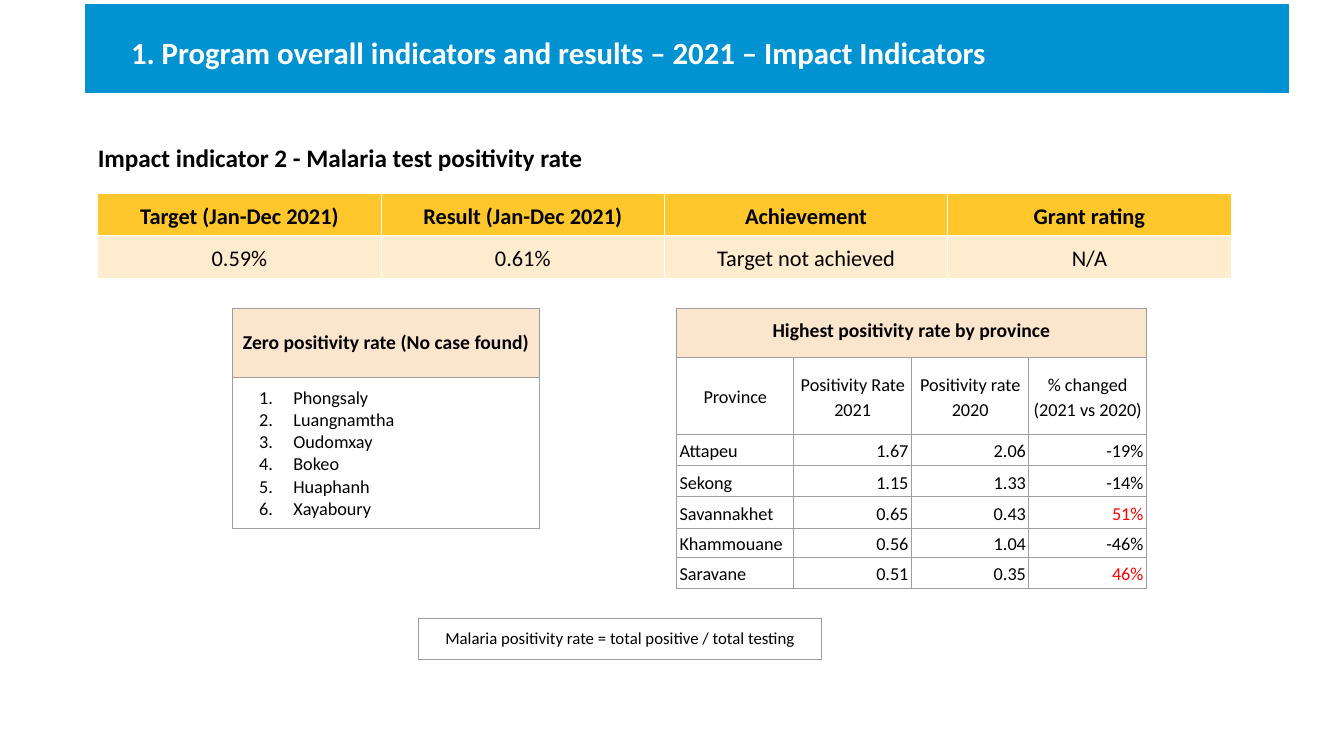
from lxml import etree
from pptx import Presentation
from pptx.dml.color import RGBColor
from pptx.enum.shapes import MSO_SHAPE
from pptx.enum.text import MSO_ANCHOR, PP_ALIGN
from pptx.oxml.ns import qn
from pptx.util import Inches, Pt

LEFT, CENTER, RIGHT = PP_ALIGN.LEFT, PP_ALIGN.CENTER, PP_ALIGN.RIGHT
TOP, MIDDLE = MSO_ANCHOR.TOP, MSO_ANCHOR.MIDDLE
RECTANGLE = MSO_SHAPE.RECTANGLE

FONT = "Calibri"
BLACK, WHITE, RED = "000000", "FFFFFF", "FF0000"
BLUE, GOLD, CREAM, PEACH, GREY = "0092D1", "FFC72C", "FFEBCD", "FCE5CD", "9E9E9E"
TIGHT = (0.03, 0.02, 0.03, 0.02)
ROOMY = (0.1, 0.1, 0.1, 0.1)

SUMMARY = [
    ("Target (Jan-Dec 2021)", "Result (Jan-Dec 2021)", "Achievement", "Grant rating"),
    ("0.59%", "0.61%", "Target not achieved", "N/A"),
]
ZERO_PROVINCES = ["Phongsaly", "Luangnamtha", "Oudomxay", "Bokeo", "Huaphanh", "Xayaboury"]
RATE_HEADINGS = ("Province", "Positivity Rate 2021", "Positivity rate 2020",
                 "% changed (2021 vs 2020)")
RATES = [
    ("Attapeu", "1.67", "2.06", "-19%"),
    ("Sekong", "1.15", "1.33", "-14%"),
    ("Savannakhet", "0.65", "0.43", "51%"),
    ("Khammouane", "0.56", "1.04", "-46%"),
    ("Saravane", "0.51", "0.35", "46%"),
]


def rgb(value):
    return RGBColor.from_string(value)


def set_margins(target, margins):
    for side, margin in zip(("left", "top", "right", "bottom"), margins):
        setattr(target, f"margin_{side}", Inches(margin))


def number_paragraph(para):
    """Give a paragraph an automatic number with a hanging indent."""
    properties = para._p.get_or_add_pPr()
    properties.set("marL", str(Inches(0.5)))
    properties.set("indent", str(-Inches(0.34)))
    etree.SubElement(properties, qn("a:buAutoNum"), type="arabicPeriod")


def write(frame, lines, size, color=BLACK, bold=False, align=LEFT, spacing=1.0,
          numbered=False):
    frame.word_wrap = True
    for index, line in enumerate(lines):
        para = frame.paragraphs[0] if index == 0 else frame.add_paragraph()
        para.alignment = align
        para.line_spacing = spacing
        if numbered:
            number_paragraph(para)
        span = para.add_run()
        span.text = line
        span.font.color.rgb = rgb(color)
        formats = {"name": FONT, "size": Pt(size), "bold": bold}
        for name, value in formats.items():
            setattr(span.font, name, value)


def border_cell(cell, color, width):
    properties = cell._tc.get_or_add_tcPr()
    for edge in ("lnL", "lnR", "lnT", "lnB"):
        line = etree.SubElement(properties, qn(f"a:{edge}"), w=str(Pt(width)))
        fill = etree.SubElement(line, qn("a:solidFill"))
        etree.SubElement(fill, qn("a:srgbClr"), val=color)


def add_grid(page, left, top, widths, heights, border, border_width=0.75):
    """Add an unfilled table with the same border round every cell."""
    frame = page.shapes.add_table(len(heights), len(widths), Inches(left), Inches(top),
                                  Inches(sum(widths)), Inches(sum(heights)))
    table = frame.table
    table.first_row = table.horz_banding = False
    for column, width in zip(table.columns, widths):
        column.width = Inches(width)
    for row, height in zip(table.rows, heights):
        row.height = Inches(height)
    for cell in table.iter_cells():
        border_cell(cell, border, border_width)
        cell.fill.background()
    return table


def fill_cell(cell, lines, size, fill=None, margins=TIGHT, anchor=MIDDLE, **text):
    set_margins(cell, margins)
    cell.vertical_anchor = anchor
    if fill:
        cell.fill.solid()
        cell.fill.fore_color.rgb = rgb(fill)
    write(cell.text_frame, lines, size, **text)


def add_heading(page, text):
    box = page.shapes.add_textbox(Inches(0.97), Inches(1.32), Inches(11.93), Inches(5.43))
    set_margins(box.text_frame, (0, 0, 0, 0))
    write(box.text_frame, [text], 18, bold=True, spacing=1.3)


def add_title_bar(page, text):
    bar = page.shapes.add_shape(RECTANGLE, Inches(0.85), Inches(0.05),
                                Inches(11.93), Inches(0.87))
    bar.shadow.inherit = False
    bar.fill.solid()
    bar.fill.fore_color.rgb = rgb(BLUE)
    bar.line.color.rgb = rgb(BLUE)
    bar.line.width = Pt(0.75)
    set_margins(bar.text_frame, (0.45, 0, 0, 0))
    bar.text_frame.vertical_anchor = MIDDLE
    write(bar.text_frame, [text], 22, color=WHITE, bold=True, spacing=1.2)


def add_summary(page):
    table = add_grid(page, 0.97, 1.92, [2.81] * 4, [0.42] * 2, WHITE, 0.83)
    for row, values in enumerate(SUMMARY):
        is_header = row == 0
        for column, value in enumerate(values):
            fill_cell(table.cell(row, column), [value], 16, GOLD if is_header else CREAM,
                      bold=is_header, align=CENTER, spacing=1.15)


def add_zero_provinces(page):
    table = add_grid(page, 2.31, 3.06, [3.04], [0.68, 1.5], GREY)
    fill_cell(table.cell(0, 0), ["Zero positivity rate (No case found)"], 14, PEACH, ROOMY,
              bold=True)
    fill_cell(table.cell(1, 0), ZERO_PROVINCES, 13, margins=ROOMY, numbered=True)


def add_highest_rates(page):
    heights = [0.49, 0.76, 0.31, 0.31, 0.31, 0.29, 0.31]
    table = add_grid(page, 6.71, 3.06, [1.165] * 4, heights, GREY, 0.83)
    table.cell(0, 0).merge(table.cell(0, 3))
    fill_cell(table.cell(0, 0), ["Highest positivity rate by province"], 14, PEACH, ROOMY,
              TOP, bold=True, align=CENTER)
    for column, heading in enumerate(RATE_HEADINGS):
        fill_cell(table.cell(1, column), [heading], 13, align=CENTER, spacing=1.15)
    for row, values in enumerate(RATES, start=2):
        for column, value in enumerate(values):
            is_rise = column == 3 and not value.startswith("-")
            fill_cell(table.cell(row, column), [value], 13, spacing=1.15,
                      color=RED if is_rise else BLACK, align=RIGHT if column else LEFT)


def add_formula(page):
    table = add_grid(page, 4.15, 6.14, [4], [0.4], GREY)
    fill_cell(table.cell(0, 0), ["Malaria positivity rate = total positive / total testing"],
              12, margins=ROOMY, anchor=TOP, align=CENTER)


def main():
    deck = Presentation()
    deck.slide_width, deck.slide_height = Inches(13.33), Inches(7.5)
    page = deck.slides.add_slide(deck.slide_layouts[6])
    add_heading(page, "Impact indicator 2 - Malaria test positivity rate")
    add_title_bar(page, "1. Program overall indicators and results – 2021 – Impact Indicators")
    add_summary(page)
    add_zero_provinces(page)
    add_highest_rates(page)
    add_formula(page)
    deck.save("out.pptx")


if __name__ == "__main__":
    main()
